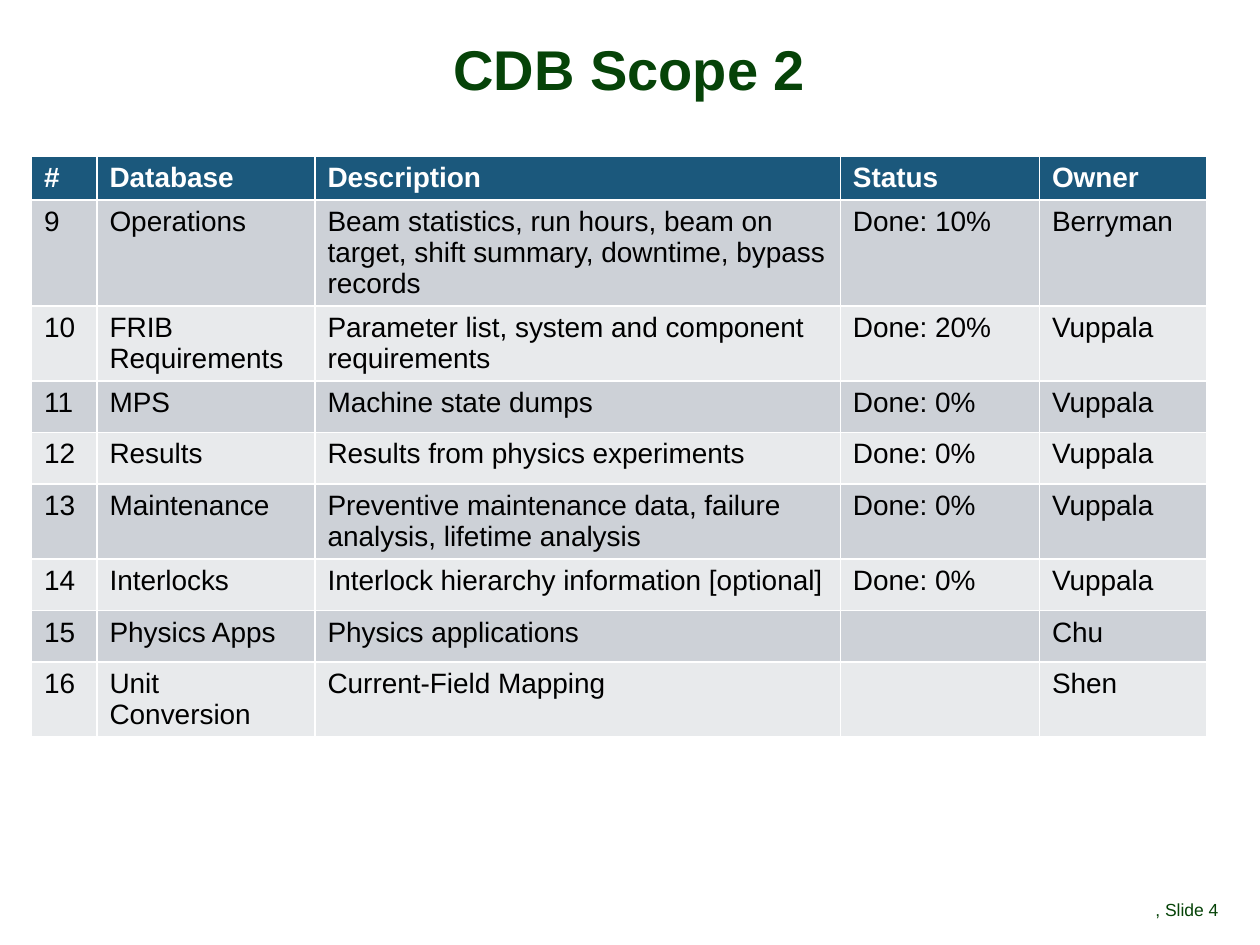
"""Build the CDB Scope 2 slide with its database status table."""
from pptx import Presentation
from pptx.dml.color import RGBColor
from pptx.enum import text
from pptx.util import Inches, Pt

COLORS = {
    "green": "064308",
    "header": "1B587C",
    "odd": "CDD1D7",
    "even": "E8EAEC",
    "white": "FFFFFF",
    "black": "000000",
}
COLUMN_WIDTHS = [0.52, 1.73, 4.17, 1.58, 1.33]
HEADER_HEIGHT = 0.34
ROW_HEIGHTS = {1: 0.41, 2: 0.59, 3: 0.84}
HEADINGS = ["#", "Database", "Description", "Status", "Owner"]
DATABASES = [
    (3, "9", "Operations", "Beam statistics, run hours, beam on target, shift summary, "
     "downtime, bypass records", "Done: 10%", "Berryman"),
    (2, "10", "FRIB Requirements", "Parameter list, system and component requirements",
     "Done: 20%", "Vuppala"),
    (1, "11", "MPS", "Machine state dumps", "Done: 0%", "Vuppala"),
    (1, "12", "Results", "Results from physics experiments", "Done: 0%", "Vuppala"),
    (2, "13", "Maintenance", "Preventive maintenance data, failure analysis, "
     "lifetime analysis", "Done: 0%", "Vuppala"),
    (1, "14", "Interlocks", "Interlock hierarchy information [optional]",
     "Done: 0%", "Vuppala"),
    (1, "15", "Physics Apps", "Physics applications", "", "Chu"),
    (2, "16", "Unit Conversion", "Current-Field Mapping", "", "Shen"),
]


def style_font(paragraph, size, color, bold=False):
    """Set the paragraph's Arial size, colour and weight."""
    font = paragraph.font
    font.name, font.size, font.bold = "Arial", Pt(size), bold
    font.color.rgb = RGBColor.from_string(COLORS[color])


def add_label(slide, box, wording, size, anchor, align, spacing, margins, bold=False):
    """Place one green line of text in the box."""
    frame = slide.shapes.add_textbox(*map(Inches, box)).text_frame
    frame.word_wrap = True
    frame.vertical_anchor = anchor
    frame.margin_left = frame.margin_right = Inches(margins[0])
    frame.margin_top = frame.margin_bottom = Inches(margins[1])
    line = frame.paragraphs[0]
    line.text = wording
    line.alignment = align
    line.line_spacing = spacing
    style_font(line, size, "green", bold)


def add_title(slide, box):
    """Place the centred slide title."""
    add_label(slide, box, "CDB Scope 2", 32, text.MSO_ANCHOR.MIDDLE,
              text.PP_ALIGN.CENTER, 0.88, (0.06, 0.02), bold=True)


def add_footer(slide, box):
    """Place the slide number at the foot."""
    add_label(slide, box, ", Slide 4", 10, text.MSO_ANCHOR.BOTTOM,
              text.PP_ALIGN.LEFT, 0.9, (0, 0.05))


def fill_row(row, values, fill, color, bold=False):
    """Write the values into a row and colour its cells."""
    for cell, value in zip(row.cells, values):
        cell.fill.solid()
        cell.fill.fore_color.rgb = RGBColor.from_string(COLORS[fill])
        cell.text = value
        style_font(cell.text_frame.paragraphs[0], 16, color, bold)


def add_scope_table(slide, left, top):
    """Place the table of databases with its top left corner as given."""
    heights = [HEADER_HEIGHT] + [ROW_HEIGHTS[lines] for lines, *_ in DATABASES]
    table = slide.shapes.add_table(
        len(heights), len(HEADINGS), Inches(left), Inches(top),
        Inches(sum(COLUMN_WIDTHS)), Inches(sum(heights))).table
    for column, width in zip(table.columns, COLUMN_WIDTHS):
        column.width = Inches(width)
    for row, height in zip(table.rows, heights):
        row.height = Inches(height)
    fill_row(table.rows[0], HEADINGS, "header", "white", bold=True)
    for number, (_, *values) in enumerate(DATABASES, start=1):
        fill_row(table.rows[number], values, "odd" if number % 2 else "even", "black")


def main():
    """Build and save the presentation."""
    deck = Presentation()
    deck.slide_width, deck.slide_height = Inches(10), Inches(7.5)
    slide = deck.slides.add_slide(deck.slide_layouts[6])
    add_scope_table(slide, 0.25, 1.24)
    add_title(slide, (0.08, 0.31, 9.83, 0.53))
    add_footer(slide, (9.17, 6.95, 0.83, 0.4))
    deck.save("out.pptx")


if __name__ == "__main__":
    main()
